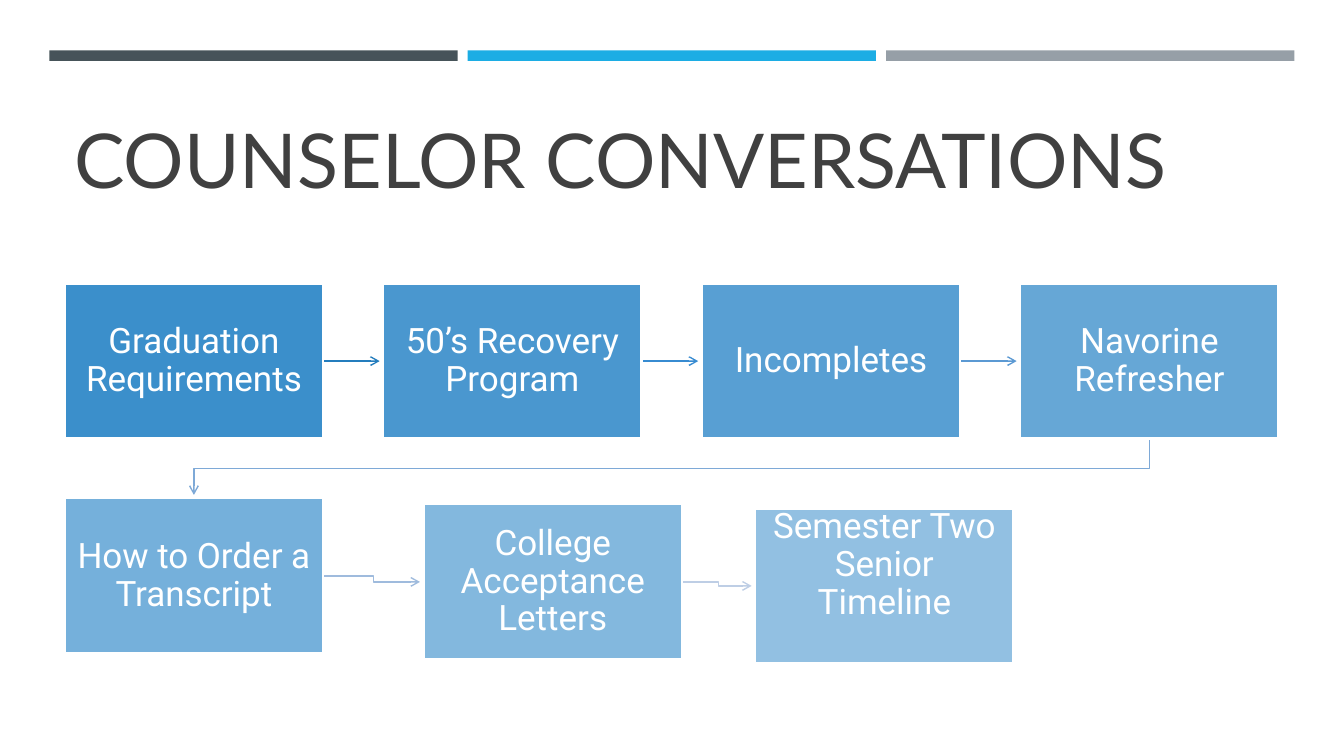
from lxml import etree
from pptx import Presentation
from pptx.dml.color import RGBColor
from pptx.enum.shapes import MSO_CONNECTOR, MSO_SHAPE
from pptx.enum.text import MSO_ANCHOR, PP_ALIGN
from pptx.oxml.ns import qn
from pptx.util import Pt

RECTANGLE = MSO_SHAPE.RECTANGLE
STRAIGHT = MSO_CONNECTOR.STRAIGHT
TOP, MIDDLE, BOTTOM = MSO_ANCHOR.TOP, MSO_ANCHOR.MIDDLE, MSO_ANCHOR.BOTTOM
CENTER = PP_ALIGN.CENTER

STEP_WIDTH, STEP_HEIGHT = 184.8, 110.9
COLUMN_PITCH = 227.5
ARROW_GAP = 2.4
BAR_COLORS = ["465359", "1CADE4", "969FA7"]
STEPS = [
    "Graduation Requirements",
    "50’s Recovery Program",
    "Incompletes",
    "Navorine Refresher",
    "How to Order a Transcript",
    "College Acceptance Letters",
    "Semester Two Senior Timeline",
]
ARROW_COLORS = ["247DBD", "378BD1", "5B99D3", "7EA9D7", "9FBBDD", "BECEE5"]
SECOND_ROW = [(0, 153.4), (256.3, 157.7), (493.2, 160.6)]


def color(hex_text):
    return RGBColor.from_string(hex_text)


def style_span(paragraph, font_name, size, hex_text):
    for span in paragraph.runs:
        span.font.name = font_name
        span.font.size = Pt(size)
        span.font.color.rgb = color(hex_text)


def add_bars(page, left, top, width, height, gap=7.2):
    """Three equal accent bars across the given box."""
    count = len(BAR_COLORS)
    bar_width = (width - gap * (count - 1)) / count
    for index, hex_text in enumerate(BAR_COLORS):
        bar = page.shapes.add_shape(
            RECTANGLE, Pt(left + index * (bar_width + gap)), Pt(top),
            Pt(bar_width), Pt(height))
        bar.shadow.inherit = False
        bar.fill.solid()
        bar.fill.fore_color.rgb = color(hex_text)
        bar.line.fill.background()


def add_title(page, left, top, width, height):
    box = page.shapes.add_textbox(Pt(left), Pt(top), Pt(width), Pt(height))
    frame = box.text_frame
    frame.word_wrap = True
    frame.vertical_anchor = BOTTOM
    frame.text = "COUNSELOR CONVERSATIONS"
    style_span(frame.paragraphs[0], "Lato", 54, "404040")


def add_step(page, left, top, text, opacity, anchor):
    step = page.shapes.add_shape(
        RECTANGLE, Pt(left), Pt(top), Pt(STEP_WIDTH), Pt(STEP_HEIGHT))
    step.shadow.inherit = False
    step.fill.solid()
    step.fill.fore_color.rgb = color("2683C6")
    fill_color = step.fill._xPr.find(qn("a:solidFill"))[0]
    etree.SubElement(fill_color, qn("a:alpha")).set("val", str(round(opacity * 1000)))
    step.line.color.rgb = color("FFFFFF")
    step.line.width = Pt(1.75)

    frame = step.text_frame
    frame.word_wrap = True
    frame.vertical_anchor = anchor
    frame.margin_left = frame.margin_right = Pt(9)
    frame.margin_top = frame.margin_bottom = Pt(0 if anchor == TOP else 9)
    frame.text = text
    paragraph = frame.paragraphs[0]
    paragraph.alignment = CENTER
    paragraph.line_spacing = 0.9
    style_span(paragraph, "Roboto", 25, "FFFFFF")


def arrow_route(start, end):
    """Corner points from one step to the next, turning halfway."""
    (left, top), (next_left, next_top) = start, end
    if next_left > left:
        x1, y1 = left + STEP_WIDTH, top + STEP_HEIGHT / 2
        x2, y2 = next_left, next_top + STEP_HEIGHT / 2
        if y1 == y2:
            return [(x1, y1), (x2 - ARROW_GAP, y2)]
        middle = (x1 + x2) / 2
        return [(x1, y1), (middle, y1), (middle, y2), (x2 - ARROW_GAP, y2)]
    x1, y1 = left + STEP_WIDTH / 2, top + STEP_HEIGHT
    x2, y2 = next_left + STEP_WIDTH / 2, next_top
    middle = (y1 + y2) / 2
    return [(x1, y1), (x1, middle), (x2, middle), (x2, y2 - ARROW_GAP)]


def add_arrow(page, route, hex_text):
    points = [(Pt(x), Pt(y)) for x, y in route]
    if len(points) == 2:
        arrow = page.shapes.add_connector(STRAIGHT, *points[0], *points[1])
    else:
        builder = page.shapes.build_freeform(*points[0])
        builder.add_line_segments(points[1:], close=False)
        arrow = builder.convert_to_shape()
        arrow.fill.background()
    arrow.line.color.rgb = color(hex_text)
    arrow.line.width = Pt(1)
    etree.SubElement(arrow.line._get_or_add_ln(), qn("a:tailEnd")).set("type", "arrow")
    etree.SubElement(arrow._element.spPr, qn("a:effectLst"))


def add_flow(page, left, top):
    """Seven steps in two rows, linked by arrows."""
    places = [(left + column * COLUMN_PITCH, top) for column in range(4)]
    places += [(left + x, top + y) for x, y in SECOND_ROW]
    for start, end, hex_text in zip(places, places[1:], ARROW_COLORS):
        add_arrow(page, arrow_route(start, end), hex_text)
    last = len(STEPS) - 1
    for index, (place, text) in enumerate(zip(places, STEPS)):
        opacity = 90 - 40 * index / last
        add_step(page, *place, text, opacity, TOP if index == last else MIDDLE)


def main():
    deck = Presentation()
    deck.slide_width, deck.slide_height = Pt(960), Pt(540)
    page = deck.slides.add_slide(deck.slide_layouts[6])
    add_bars(page, 35.2, 36, 889.4, 7.5)
    add_title(page, 46.1, 55.4, 868.3, 93.6)
    add_flow(page, 46.1, 202.5)
    deck.save("out.pptx")


if __name__ == "__main__":
    main()
